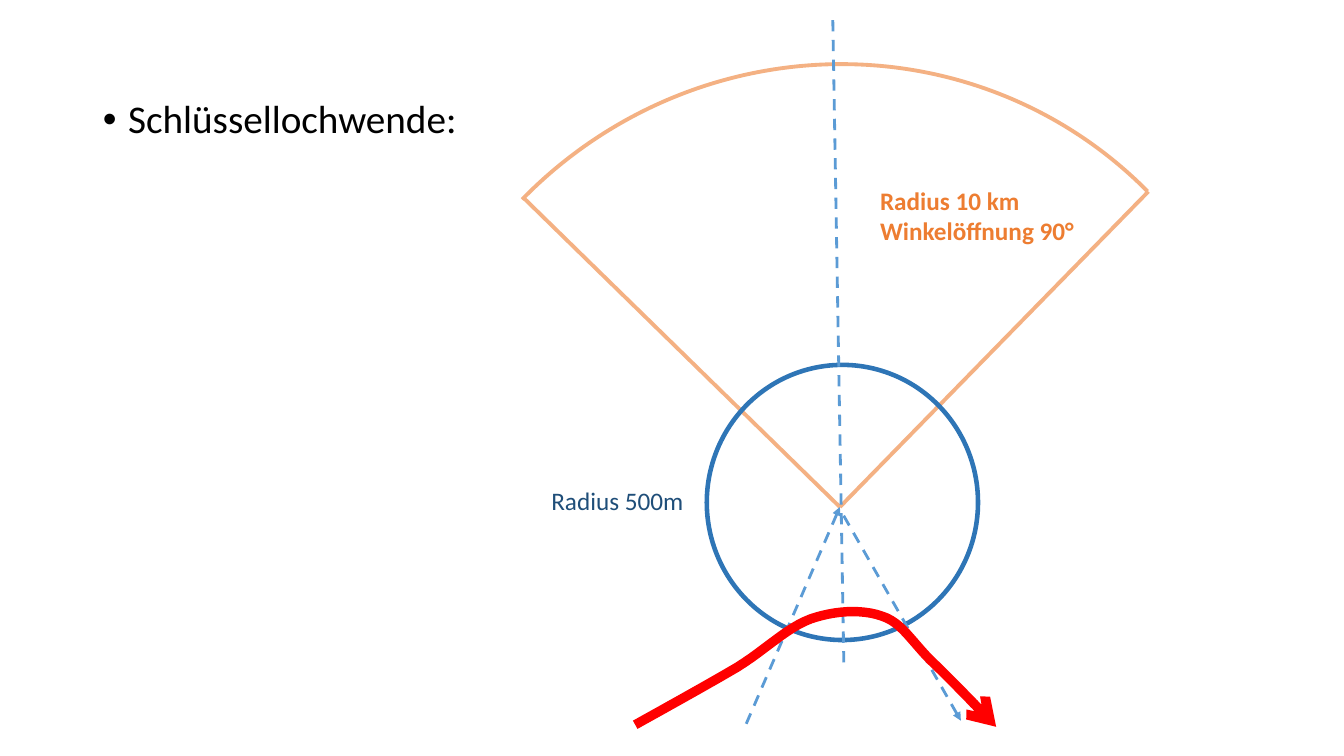
"""Build the slide that sketches the keyhole turn with its sector, circle and flight path."""
from lxml.etree import SubElement
from pptx import Presentation
from pptx.dml.color import RGBColor
from pptx.enum.dml import MSO_LINE_DASH_STYLE as Dash
from pptx.enum.shapes import MSO_CONNECTOR as Connector, MSO_SHAPE as Shape
from pptx.enum.text import MSO_AUTO_SIZE as AutoSize
from pptx.oxml.ns import qn
from pptx.util import Inches, Pt


def style_line(shape, color, width, dash=None, **arrowheads):
    line = shape.line
    line.color.rgb = RGBColor.from_string(color)
    line.width = Pt(width)
    if dash:
        line.dash_style = dash
    for end, kind in arrowheads.items():
        SubElement(line._get_or_add_ln(), qn(f"a:{end}"), type=kind)
    if shape._element.spPr.find(qn("a:effectLst")) is None:
        SubElement(shape._element.spPr, qn("a:effectLst"))


def write_lines(text_frame, lines, color, **formats):
    text_frame.text = "\n".join(lines)
    for paragraph in text_frame.paragraphs:
        font = paragraph.runs[0].font
        font.color.rgb = RGBColor.from_string(color)
        for name, value in {"name": "Calibri", **formats}.items():
            setattr(font, name, value)


presentation = Presentation()
presentation.slide_width = Inches(13.33)
presentation.slide_height = Inches(7.5)
slide = presentation.slides.add_slide(presentation.slide_layouts[1])
shapes = slide.shapes

title = shapes.title
title._element.getparent().remove(title._element)
body = slide.placeholders[1]
for name, value in {"left": 0.92, "top": 0.94, "width": 3.86, "height": 0.56}.items():
    setattr(body, name, Inches(value))
write_lines(body.text_frame, ["Schlüssellochwende:"], "000000", size=Pt(28))
body.text_frame.auto_size = AutoSize.NONE
bullet = body.text_frame.paragraphs[0]
bullet.line_spacing = 0.9
bullet.space_before = Pt(10)
for name, value in {"marL": 0.25, "indent": -0.25}.items():
    bullet._p.get_or_add_pPr().set(name, str(Inches(value)))

center = (8.33, 5.03)
sector = ("F4B183", 2.75)
course = ("5B9BD5", 2, Dash.DASH)

for corner in [(11.39, 1.9), (5.19, 1.96)]:
    edge = shapes.add_connector(Connector.STRAIGHT, *map(Inches, center + corner))
    style_line(edge, *sector)

arc = shapes.add_shape(Shape.ARC, *map(Inches, (3.87, 0.68, 8.78, 8.61)))
arc.rotation = 314.3
arc.adjustments[0], arc.adjustments[1] = 162, 0.618
circle = shapes.add_shape(Shape.OVAL, *map(Inches, (7.01, 3.62, 2.69, 2.73)))
for outline, look in [(arc, sector), (circle, ("2E75B6", 3.25))]:
    outline.shadow.inherit = False
    outline.fill.background()
    style_line(outline, *look)

courses = [
    (center, (7.38, 7.23), {"headEnd": "triangle"}),
    ((8.26, 0.2), (8.37, 6.6), {}),
    ((9.53, 7.15), (8.33, 5.05), {"headEnd": "triangle"}),
]
for start, end, arrowheads in courses:
    leg = shapes.add_connector(Connector.STRAIGHT, *map(Inches, start + end))
    style_line(leg, *course, **arrowheads)

labels = [
    ((8.63, 1.79, 2.15, 0.71), ["Radius 10 km", "Winkelöffnung 90°"], "ED7D31", True),
    ((5.37, 4.77, 1.53, 0.4), ["Radius 500m"], "1F4E79", False),
]
for place, lines, color, bold in labels:
    label = shapes.add_textbox(*map(Inches, place))
    write_lines(label.text_frame, lines, color, size=Pt(18), bold=bold)
    label.text_frame.word_wrap = False
    label.text_frame.auto_size = AutoSize.SHAPE_TO_FIT_TEXT

path_start = (6.3, 7.19)
curves = [
    [(6.66, 6.99), (7.02, 6.79), (7.31, 6.62)],
    [(7.6, 6.44), (7.8, 6.23), (8.04, 6.14)],
    [(8.27, 6.06), (8.54, 6.04), (8.74, 6.11)],
    [(8.94, 6.17), (9.04, 6.36), (9.23, 6.55)],
    [(9.42, 6.73), (9.65, 6.97), (9.88, 7.21)],
]
steps = 12
points = []
current = path_start
for curve in curves:
    for step in range(1, steps + 1):
        t = step / steps
        weights = ((1 - t) ** 3, 3 * t * (1 - t) ** 2, 3 * t**2 * (1 - t), t**3)
        points.append([
            Inches(sum(weight * value for weight, value in zip(weights, axis)))
            for axis in zip(current, *curve)
        ])
    current = curve[-1]
builder = shapes.build_freeform(*map(Inches, path_start))
builder.add_line_segments(points, close=False)
flight_path = builder.convert_to_shape()
flight_path.shadow.inherit = False
flight_path.fill.background()
style_line(flight_path, "FF0000", 6.75, tailEnd="arrow")

presentation.save("out.pptx")
